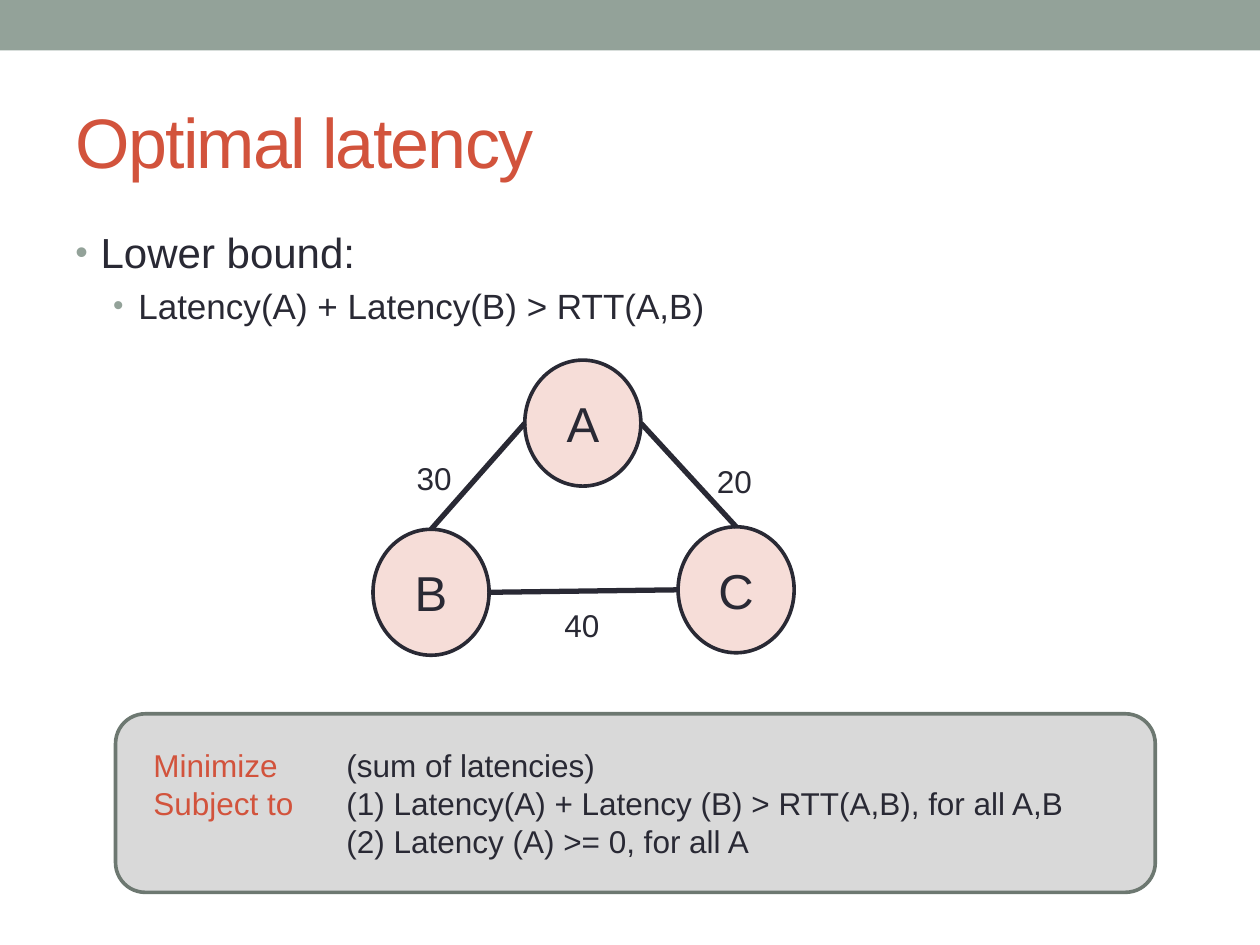
from lxml.etree import SubElement
from pptx import Presentation
from pptx.dml.color import RGBColor
from pptx.enum.shapes import MSO_CONNECTOR as Connector, MSO_SHAPE as Shape
from pptx.enum.text import MSO_ANCHOR as Anchor, PP_ALIGN as Align
from pptx.oxml.ns import qn
from pptx.util import Cm, Pt

SAGE = RGBColor(0x93, 0xA2, 0x99)
DARK_SAGE = RGBColor(0x6D, 0x78, 0x71)
RED = RGBColor(0xD2, 0x53, 0x3C)
INK = RGBColor(0x29, 0x29, 0x34)
PINK = RGBColor(0xF6, 0xDD, 0xD8)
GREY = RGBColor(0xD9, 0xD9, 0xD9)

TITLE = "Optimal latency"
# text, size, left margin in cm
BULLETS = [
    ("Lower bound:", 24, 0.51),
    ("Latency(A) + Latency(B) > RTT(A,B)", 20, 1.27),
]
HANG = 0.51

# name: left, top in cm
NODES = {"A": (10.58, 7.26), "B": (7.52, 10.67), "C": (13.67, 10.62)}
NODE_W, NODE_H = 2.34, 2.54
# start node, side, end node, side
EDGES = [
    ("A", "left", "B", "top"),
    ("C", "left", "B", "right"),
    ("A", "right", "C", "top"),
]
# text, left, top in cm
DELAYS = [("30", 8.15, 9.13), ("20", 14.2, 9.18), ("40", 11.13, 12.1)]

PROGRAM = [
    ("Minimize", "(sum of latencies)"),
    ("Subject to", "(1) Latency(A) + Latency (B) > RTT(A,B), for all A,B"),
    ("", "(2) Latency (A) >= 0, for all A"),
]
KEYWORD_LEFT, FORMULA_LEFT = 0.34, 4.23


def add_span(para, text, size=18, color=INK):
    span = para.add_run()
    span.text = text
    span.font.name = "Arial"
    span.font.size = Pt(size)
    span.font.color.rgb = color
    return span


def set_indent(para, margin, first):
    props = para._p.get_or_add_pPr()
    props.set("marL", str(Cm(margin)))
    props.set("indent", str(Cm(first)))
    return props


def add_bullet(para, margin):
    props = set_indent(para, margin, -HANG)
    color = SubElement(props, qn("a:buClr"))
    SubElement(color, qn("a:srgbClr"), val=str(SAGE))
    SubElement(props, qn("a:buSzPct"), val="85000")
    SubElement(props, qn("a:buFont"), typeface="Arial")
    SubElement(props, qn("a:buChar"), char="•")


def add_shape(slide, kind, left, top, width, height, fill, line=None):
    shape = slide.shapes.add_shape(kind, Cm(left), Cm(top), Cm(width), Cm(height))
    shape.shadow.inherit = False
    shape.fill.solid()
    shape.fill.fore_color.rgb = fill
    if line is None:
        shape.line.fill.background()
    else:
        shape.line.color.rgb = line
        shape.line.width = Pt(2.08)
    shape.text_frame.vertical_anchor = Anchor.MIDDLE
    return shape


def side_point(node, side):
    left, top = NODES[node]
    across, down = {"left": (0, 0.5), "right": (1, 0.5), "top": (0.5, 0)}[side]
    return Cm(left + across * NODE_W), Cm(top + down * NODE_H)


def add_title(slide):
    title = slide.shapes.title
    title.left, title.top, title.width, title.height = Cm(1.27), Cm(1.47), Cm(22.86), Cm(2.74)
    title.text_frame.vertical_anchor = Anchor.MIDDLE
    para = title.text_frame.paragraphs[0]
    para.alignment = Align.LEFT
    span = add_span(para, TITLE, size=40, color=RED)
    span.font._element.set("spc", "-100")


def add_bullets(slide):
    box = slide.shapes.add_textbox(Cm(1.27), Cm(4.45), Cm(22.86), Cm(13.54))
    frame = box.text_frame
    frame.word_wrap = True
    for number, (text, size, margin) in enumerate(BULLETS):
        para = frame.add_paragraph() if number else frame.paragraphs[0]
        para.space_before = Pt(0.2 * size)
        add_bullet(para, margin)
        add_span(para, text, size=size)


def add_program(slide):
    panel = add_shape(slide, Shape.ROUNDED_RECTANGLE, 2.33, 14.39, 20.96, 3.6, GREY, DARK_SAGE)
    frame = panel.text_frame
    for number, (keyword, formula) in enumerate(PROGRAM):
        para = frame.add_paragraph() if number else frame.paragraphs[0]
        para.alignment = Align.LEFT
        set_indent(para, FORMULA_LEFT, KEYWORD_LEFT - FORMULA_LEFT if keyword else 0)
        if keyword:
            add_span(para, keyword + "\t", color=RED)
        add_span(para, formula)


def add_graph(slide):
    for name, (left, top) in NODES.items():
        node = add_shape(slide, Shape.OVAL, left, top, NODE_W, NODE_H, PINK, INK)
        para = node.text_frame.paragraphs[0]
        para.alignment = Align.CENTER
        add_span(para, name, size=28)
    for start, start_side, end, end_side in EDGES:
        edge = slide.shapes.add_connector(
            Connector.STRAIGHT, *side_point(start, start_side), *side_point(end, end_side))
        edge.line.color.rgb = INK
        edge.line.width = Pt(3)
        SubElement(edge._element.spPr, qn("a:effectLst"))
    for text, left, top in DELAYS:
        box = slide.shapes.add_textbox(Cm(left), Cm(top), Cm(1.22), Cm(1.02))
        box.text_frame.word_wrap = False
        add_span(box.text_frame.paragraphs[0], text)


def main():
    deck = Presentation()
    deck.slide_width, deck.slide_height = Cm(25.4), Cm(19.05)
    slide = deck.slides.add_slide(deck.slide_layouts[5])
    add_shape(slide, Shape.RECTANGLE, 0, 0, 25.4, 1.02, SAGE)
    add_title(slide)
    add_bullets(slide)
    add_program(slide)
    add_graph(slide)
    deck.save("out.pptx")


if __name__ == "__main__":
    main()
